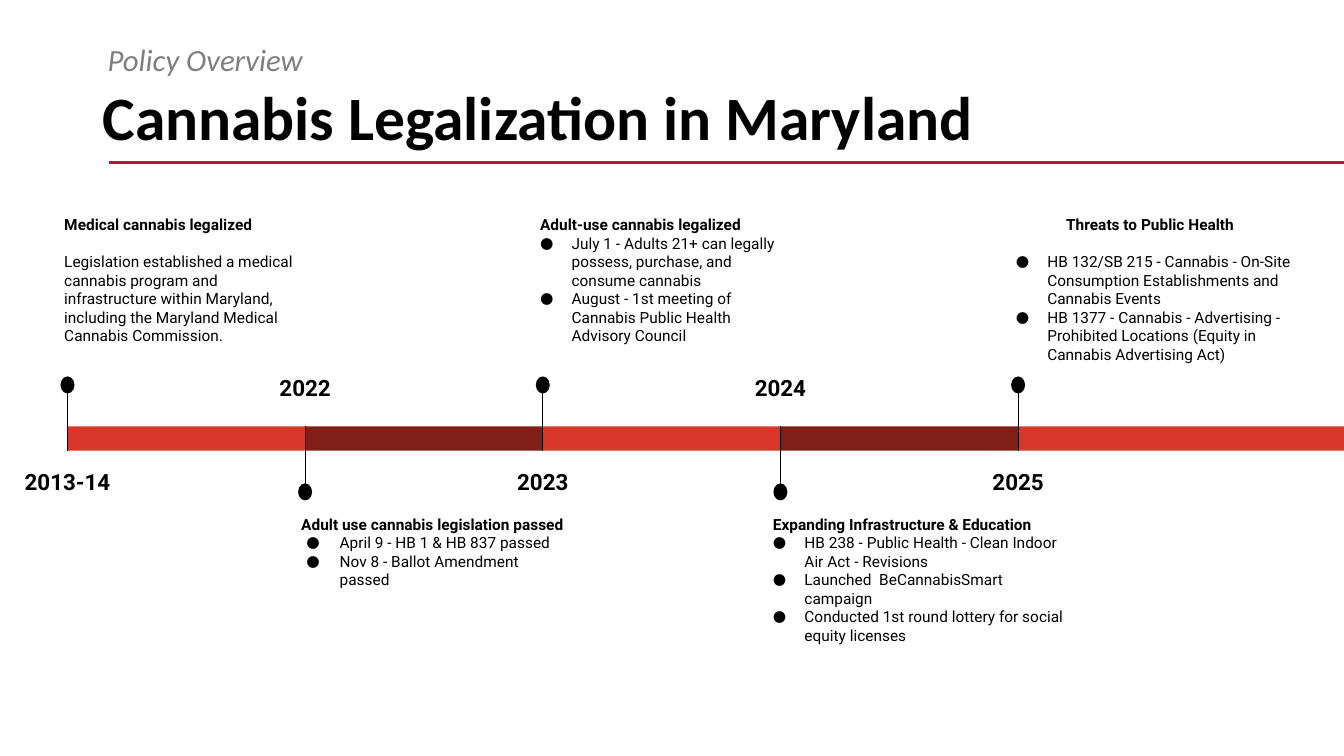
from dataclasses import dataclass

from lxml import etree
from pptx import Presentation
from pptx import util as u
from pptx.dml.color import RGBColor
from pptx.enum import shapes, text
from pptx.oxml import ns

Pt = u.Pt


@dataclass(frozen=True)
class Theme:
    ink: str = "000000"
    muted: str = "7F7F7F"
    rule: str = "C40E3E"
    bars: tuple = ("D83729", "801F17")
    heading_font: str = "Calibri"
    body_font: str = "Roboto"
    title_size: float = 44
    kicker_size: float = 22
    year_size: float = 16
    story_size: float = 11


@dataclass
class Milestone:
    year: str
    heading: str
    details: list
    left: float
    width: float
    bulleted: bool = True
    hang: float = 22.5
    bullet_at: float = 0
    heading_indent: float = 0
    gap: float = 0


class TimelineSlide:
    width = 960
    start = 48.2
    step = 169.75
    bar_top = 304.6
    bar_height = 17.2
    stem = 46.8
    head_width = 10
    head_height = 12.2

    def __init__(self, deck, theme):
        self.theme = theme
        self.slide = deck.slides.add_slide(deck.slide_layouts[6])

    def textbox(self, left, top, width, height, inset):
        box = self.slide.shapes.add_textbox(Pt(left), Pt(top), Pt(width), Pt(height))
        frame = box.text_frame
        frame.word_wrap = True
        frame.margin_left = frame.margin_right = Pt(inset[0])
        frame.margin_top = frame.margin_bottom = Pt(inset[1])
        return frame

    def typeset(self, paragraph, words, size, font=None, color=None, bold=False, italic=False):
        paragraph.text = words
        paragraph.font.name = font or self.theme.body_font
        paragraph.font.size = Pt(size)
        paragraph.font.bold = bold
        paragraph.font.italic = italic
        paragraph.font.color.rgb = RGBColor.from_string(color or self.theme.ink)

    def bullet(self, paragraph, margin, hang):
        props = paragraph._p.get_or_add_pPr()
        props.set("marL", str(Pt(margin)))
        props.set("indent", str(-Pt(hang)))
        tint = etree.SubElement(props, ns.qn("a:buClr"))
        etree.SubElement(tint, ns.qn("a:srgbClr"), val=self.theme.ink)
        etree.SubElement(props, ns.qn("a:buFont"), typeface=self.theme.body_font)
        etree.SubElement(props, ns.qn("a:buChar"), char="●")

    def line(self, x1, y1, x2, y2, color, weight):
        line = self.slide.shapes.add_connector(
            shapes.MSO_CONNECTOR.STRAIGHT, Pt(x1), Pt(y1), Pt(x2), Pt(y2))
        line.line.color.rgb = RGBColor.from_string(color)
        line.line.width = Pt(weight)
        etree.SubElement(line._element.spPr, ns.qn("a:effectLst"))

    def shape(self, kind, left, top, width, height, color):
        shape = self.slide.shapes.add_shape(kind, Pt(left), Pt(top), Pt(width), Pt(height))
        shape.shadow.inherit = False
        shape.fill.solid()
        shape.fill.fore_color.rgb = RGBColor.from_string(color)
        shape.line.fill.background()

    def header(self, kicker, title):
        theme = self.theme
        self.line(77.8, 115.9, self.width, 115.9, theme.rule, 2.25)
        frame = self.textbox(66.2, 46.8, 828, 78.5, (7.2, 3.6))
        frame.vertical_anchor = text.MSO_ANCHOR.MIDDLE
        headline = frame.paragraphs[0]
        headline.line_spacing = 0.9
        self.typeset(headline, title, theme.title_size, theme.heading_font, bold=True)
        overline = self.textbox(69.8, 28.8, 824.4, 27.4, (7.2, 3.6)).paragraphs[0]
        overline.line_spacing = 0.9
        self.typeset(overline, kicker, theme.kicker_size, theme.heading_font, theme.muted, italic=True)

    def bar(self, index, last):
        left = self.start + index * self.step
        width = self.width - left if last else self.step
        self.shape(shapes.MSO_SHAPE.RECTANGLE, left, self.bar_top, width,
                   self.bar_height, self.theme.bars[index % 2])

    def pin(self, x, above):
        if above:
            root = self.bar_top + self.bar_height
            tip = root - self.stem
        else:
            root = self.bar_top
            tip = root + self.stem
        self.line(x, root, x, tip, self.theme.ink, 0.75)
        self.shape(shapes.MSO_SHAPE.OVAL, x - self.head_width / 2, tip - self.head_height / 2,
                   self.head_width, self.head_height, self.theme.ink)

    def year(self, x, above, label):
        top = 322.6 if above else 255.6
        paragraph = self.textbox(x - 48, top, 96, 48.2, (9, 9)).paragraphs[0]
        paragraph.alignment = text.PP_ALIGN.CENTER
        paragraph.line_spacing = 1.15
        self.typeset(paragraph, label, self.theme.year_size, bold=True)

    def story(self, milestone, above):
        top = 144.7 if above else 358.6
        frame = self.textbox(milestone.left, top, milestone.width, 123, (9.2, 9.2))
        heading = frame.paragraphs[0]
        if milestone.heading_indent:
            heading._p.get_or_add_pPr().set("indent", str(Pt(milestone.heading_indent)))
        self.typeset(heading, milestone.heading, self.theme.story_size, bold=True)
        for position, detail in enumerate(milestone.details):
            paragraph = frame.add_paragraph()
            if milestone.bulleted:
                self.bullet(paragraph, milestone.bullet_at + milestone.hang, milestone.hang)
            if position == 0 and milestone.gap:
                paragraph.space_before = Pt(milestone.gap)
            self.typeset(paragraph, detail, self.theme.story_size)

    def timeline(self, milestones):
        for index, milestone in enumerate(milestones):
            x = self.start + index * self.step
            above = index % 2 == 0
            self.bar(index, index == len(milestones) - 1)
            self.pin(x, above)
            self.year(x, above, milestone.year)
            self.story(milestone, above)


MILESTONES = [
    Milestone("2013-14", "Medical cannabis legalized", [
        "Legislation established a medical cannabis program and infrastructure within "
        "Maryland, including the Maryland Medical Cannabis Commission.",
    ], 36.7, 197.3, bulleted=False, gap=13.2),
    Milestone("2022", "Adult use cannabis legislation passed", [
        "April 9 - HB 1 & HB 837 passed",
        "Nov 8 - Ballot Amendment passed",
    ], 206, 211.7, hang=23.8, bullet_at=3.6),
    Milestone("2023", "Adult-use cannabis legalized", [
        "July 1 - Adults 21+ can legally possess, purchase, and consume cannabis",
        "August - 1st meeting of Cannabis Public Health Advisory Council",
    ], 376.6, 197.3),
    Milestone("2024", "Expanding Infrastructure & Education", [
        "HB 238 - Public Health - Clean Indoor Air Act - Revisions",
        "Launched  BeCannabisSmart campaign",
        "Conducted 1st round lottery for social equity licenses",
    ], 542.9, 226),
    Milestone("2025", "Threats to Public Health", [
        "HB 132/SB 215 - Cannabis - On-Site Consumption Establishments and Cannabis Events",
        "HB 1377 - Cannabis - Advertising - Prohibited Locations "
        "(Equity in Cannabis Advertising Act)",
    ], 716.4, 232.6, heading_indent=36, gap=13.2),
]


def main():
    deck = Presentation()
    deck.slide_width, deck.slide_height = Pt(960), Pt(540)
    overview = TimelineSlide(deck, Theme())
    overview.header("Policy Overview", "Cannabis Legalization in Maryland")
    overview.timeline(MILESTONES)
    deck.save("out.pptx")


if __name__ == "__main__":
    main()
